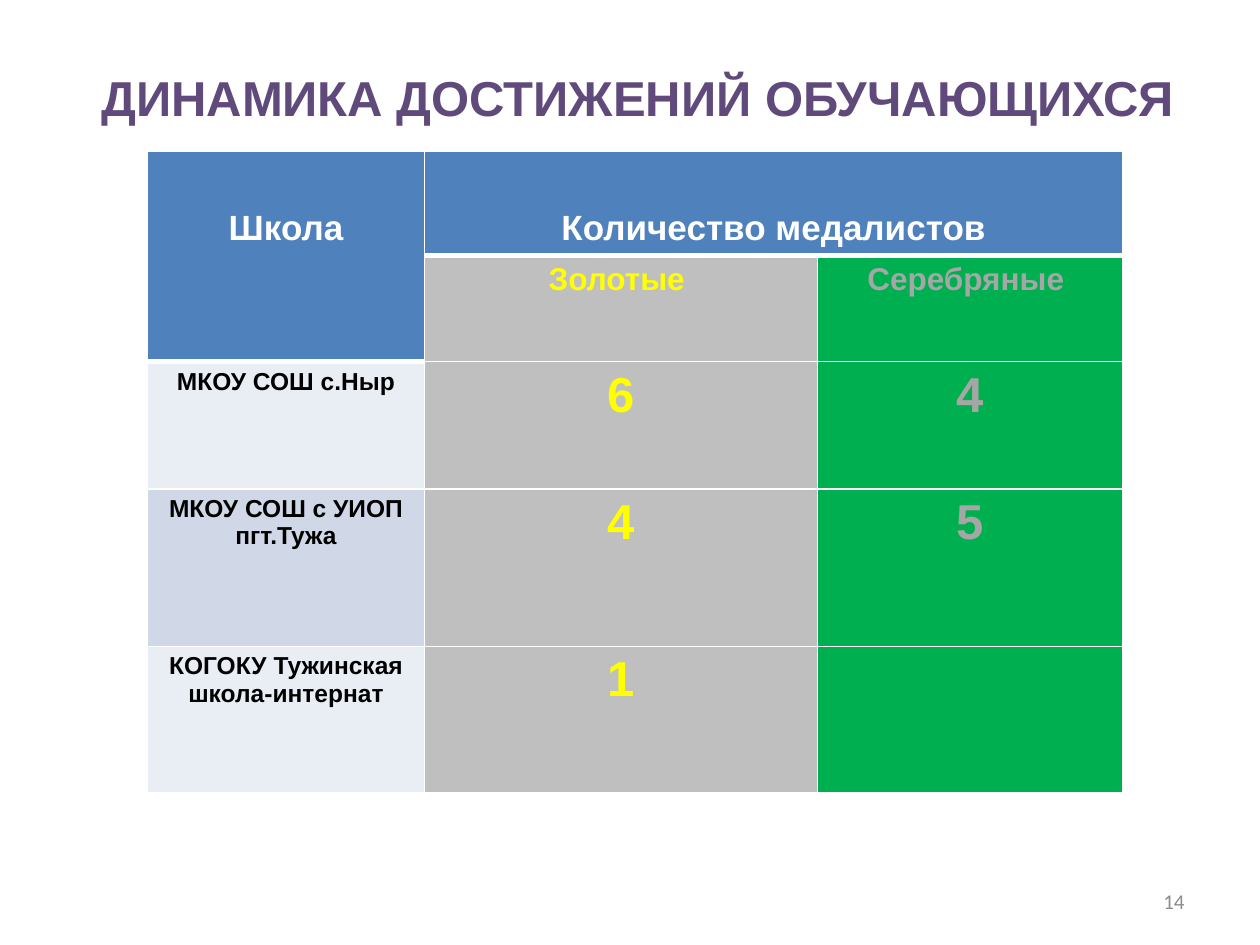
from lxml import etree
from pptx import Presentation
from pptx.dml.color import RGBColor
from pptx.enum import text
from pptx.oxml import ns
from pptx.util import Inches, Pt

COLUMNS = [2.2, 3.12, 2.42]
ROWS = [0.83, 0.84, 1.01, 1.25, 1.16]
SUBHEADS = ["Золотые ", "Серебряные "]
SCHOOLS = [
    ("МКОУ СОШ с.Ныр", "6", "4"),
    ("МКОУ СОШ с УИОП пгт.Тужа", "4", "5"),
    ("КОГОКУ Тужинская школа-интернат", "1", ""),
]
HEADER_FILL, WHITE = "4F81BD", "FFFFFF"
BANDS = ["E9EDF4", "D0D8E8"]
MEDAL_STYLES = [("BFBFBF", "FFFF00"), ("00B050", "A6A6A6")]


def color(value):
    """Turn a hex string into a colour."""
    return RGBColor.from_string(value)


def write(frame, words, size, ink, bold=True, face="Arial",
          align=text.PP_ALIGN.CENTER):
    """Put one formatted paragraph into a text frame."""
    paragraph = frame.paragraphs[0]
    paragraph.text = words
    paragraph.alignment = align
    font = paragraph.font
    font.size, font.bold, font.name = Pt(size), bold, face
    font.color.rgb = color(ink)


def outline(cell, bottom=1):
    """Draw white borders around a cell."""
    properties = cell._tc.get_or_add_tcPr()
    for side, width in (("L", 1), ("R", 1), ("T", 1), ("B", bottom)):
        line = etree.SubElement(properties, ns.qn(f"a:ln{side}"), w=str(Pt(width)))
        fill = etree.SubElement(line, ns.qn("a:solidFill"))
        etree.SubElement(fill, ns.qn("a:srgbClr"), val=WHITE)


def fill_cell(cell, words, size, ink, background, bottom=1):
    """Outline, colour and fill in one table cell."""
    outline(cell, bottom)
    cell.fill.solid()
    cell.fill.fore_color.rgb = color(background)
    if words:
        write(cell.text_frame, words, size, ink)


def add_title(slide):
    """Place and format the slide title."""
    title = slide.shapes.title
    title.left, title.top = Inches(0.5), Inches(0.3)
    title.width, title.height = Inches(9), Inches(0.87)
    frame = title.text_frame
    frame.vertical_anchor = text.MSO_ANCHOR.MIDDLE
    frame.margin_left, frame.margin_top = Inches(0.22), Inches(0.12)
    write(frame, "ДИНАМИКА ДОСТИЖЕНИЙ ОБУЧАЮЩИХСЯ", 28, "604A7B")


def add_header(medals):
    """Build the two merged header cells and the medal subheads."""
    for row, column in ((0, 0), (0, 1), (0, 2), (1, 0)):
        header = medals.cell(row, column)
        fill_cell(header, "", 20, WHITE, HEADER_FILL, bottom=3)
    medals.cell(0, 0).merge(medals.cell(1, 0))
    medals.cell(0, 1).merge(medals.cell(0, 2))
    for column, words in enumerate(["Школа", "Количество медалистов"]):
        header = medals.cell(0, column)
        header.margin_top = Inches(0.46)
        write(header.text_frame, words, 20, WHITE)
    for column, (words, style) in enumerate(zip(SUBHEADS, MEDAL_STYLES), 1):
        background, ink = style
        fill_cell(medals.cell(1, column), words, 18, ink, background)


def add_medals(slide):
    """Add the table of medallists by school."""
    medals = slide.shapes.add_table(
        len(ROWS), len(COLUMNS), Inches(1.17), Inches(1.2),
        Inches(sum(COLUMNS)), Inches(sum(ROWS))).table
    for column, width in zip(medals.columns, COLUMNS):
        column.width = Inches(width)
    for row, height in zip(medals.rows, ROWS):
        row.height = Inches(height)
    add_header(medals)
    for index, (school, *counts) in enumerate(SCHOOLS):
        row = index + 2
        fill_cell(medals.cell(row, 0), school, 14, "000000", BANDS[index % 2])
        for column, (count, style) in enumerate(zip(counts, MEDAL_STYLES), 1):
            background, ink = style
            fill_cell(medals.cell(row, column), count, 28, ink, background)


def add_page_number(slide):
    """Add the page number at the lower right."""
    number = slide.shapes.add_textbox(
        Inches(7.17), Inches(6.95), Inches(2.33), Inches(0.4))
    frame = number.text_frame
    frame.word_wrap = True
    frame.vertical_anchor = text.MSO_ANCHOR.MIDDLE
    write(frame, "14", 12, "8C8C8C", False, "Calibri", text.PP_ALIGN.RIGHT)


def main():
    """Build and save the slide."""
    deck = Presentation()
    deck.slide_width, deck.slide_height = Inches(10), Inches(7.5)
    slide = deck.slides.add_slide(deck.slide_layouts[5])
    add_title(slide)
    add_medals(slide)
    add_page_number(slide)
    deck.save("out.pptx")


if __name__ == "__main__":
    main()
